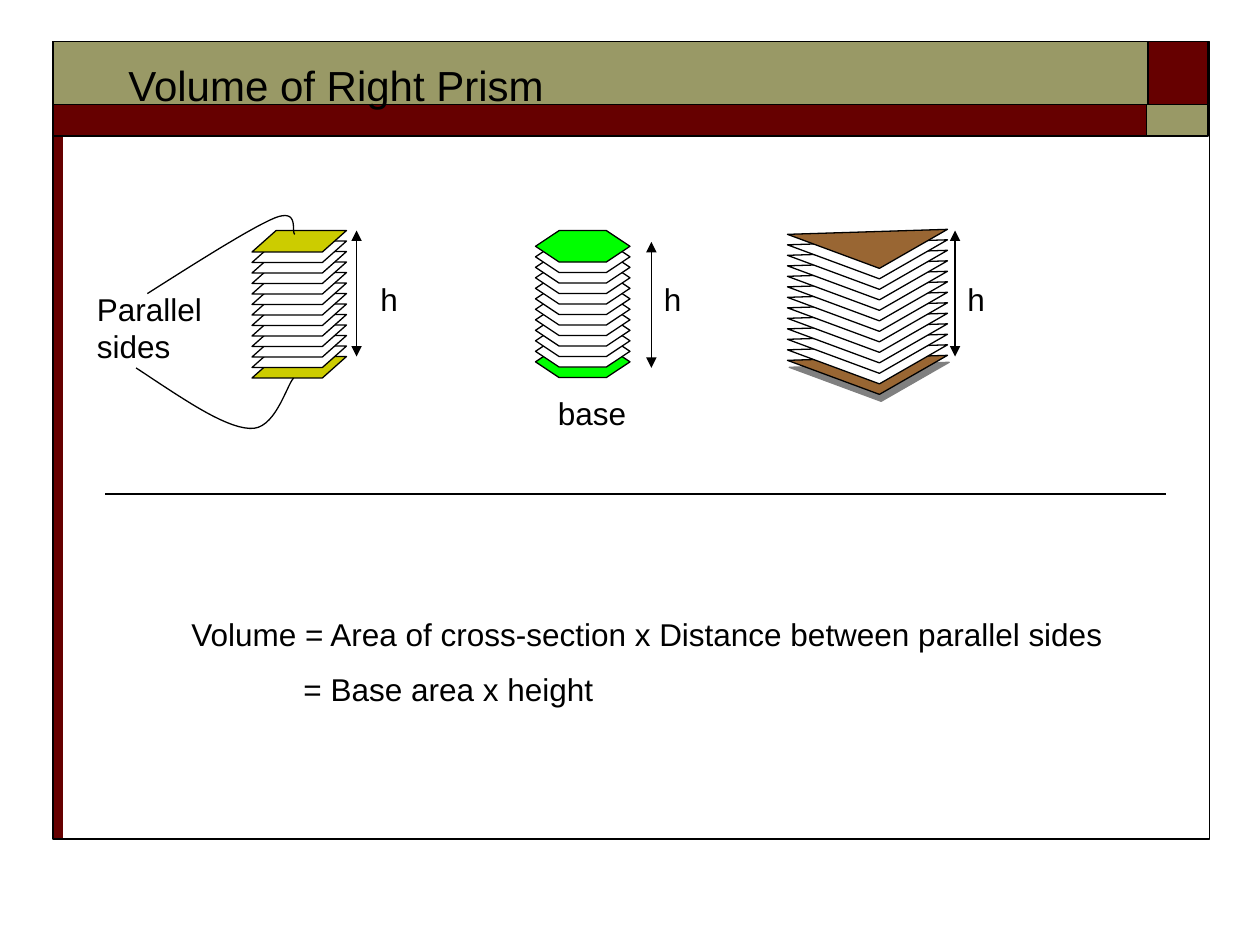
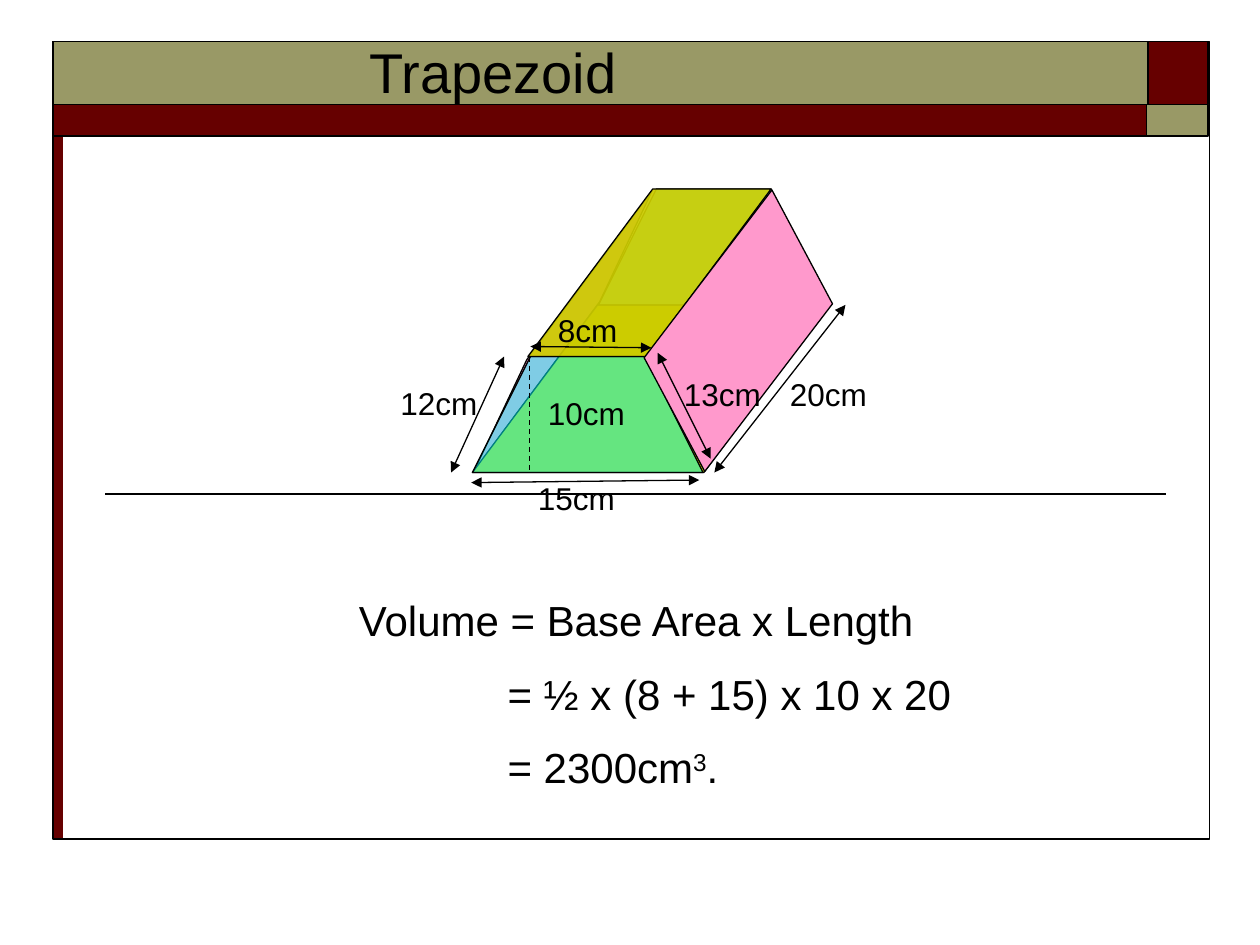
from lxml.etree import SubElement
from pptx import Presentation
from pptx.dml.color import RGBColor
from pptx.enum.dml import MSO_LINE
from pptx.enum.shapes import MSO_CONNECTOR, MSO_SHAPE
from pptx.enum.text import MSO_AUTO_SIZE, PP_ALIGN
from pptx.oxml.ns import qn
from pptx.util import Inches, Pt

COLORS = {
    "black": "000000", "white": "FFFFFF", "maroon": "660000", "olive": "999966",
    "yellow": "CCCC00", "green": "00FF00", "brown": "996633",
    "pink": "FF99CC", "cyan": "00FFFF", "gray": "808080",
}
FONT = "Arial"

# Frame shared by both slides: left, top, width, height, fill, line width
BANDS = [
    (0.42, 1.08, 0.08, 5.58, "maroon", 0),
    (9.09, 0.33, 0.5, 0.5, "maroon", 1),
    (0.42, 0.33, 8.69, 0.5, "olive", 1),
    (0.42, 0.83, 8.69, 0.25, "maroon", 1),
    (9.1, 0.83, 0.49, 0.25, "olive", 1),
    (0.42, 0.33, 9.18, 6.33, None, 1),
]
DIVIDER = ((9.25, 3.92), (0.83, 3.92))

# Right prisms drawn as stacks of sheets
SHEET_GAP = 1 / 12
SHEET_STACKS = [
    dict(preset=MSO_SHAPE.PARALLELOGRAM, adjust=1.125, size=(0.75, 0.17),
         left=2, top=1.83, sheets=13, color="yellow"),
    dict(preset=MSO_SHAPE.HEXAGON, adjust=0.75, size=(0.75, 0.25),
         left=4.25, top=1.83, sheets=12, color="green"),
]
TRIANGLE = [(6.98, 2.13), (7.52, 1.82), (6.25, 1.86)]
TRIANGLE_SHEETS = 13
HEIGHT_ARROWS = [((2.83, 1.83), (2.83, 2.83)), ((7.58, 1.83), (7.58, 2.83)),
                 ((5.17, 1.92), (5.17, 2.92))]
CALLOUT_CURVES = [
    [(1.17, 2.33), (1.58, 2.07), (1.99, 1.81), (2.18, 1.73),
     (2.38, 1.65), (2.31, 1.84), (2.34, 1.86)],
    [(1.08, 2.92), (1.43, 3.15), (1.77, 3.39), (1.98, 3.4),
     (2.18, 3.42), (2.27, 3.07), (2.33, 3)],
]
PRISM_LABELS = [
    ("h", 2.92, 2.17, 0.33, 0.4), ("h", 5.17, 2.17, 0.33, 0.4),
    ("h", 7.58, 2.17, 0.33, 0.4), ("Parallel sides", 0.67, 2.25, 1.08, 0.7),
    ("base", 4.33, 3.08, 0.75, 0.4),
]
PRISM_FORMULA = ["Volume = Area of cross-section x Distance between parallel sides",
                 "= Base area x height"]

# Trapezoid prism
TRAPEZOID = [(5.58, 3.75), (5.12, 2.83), (4.21, 2.83), (3.75, 3.75)]
BACK_SHIFT = (1, -1.33)
SIDE_FACES = {
    "left": dict(box=(3.16, 2.53, 2.62, 0.19), adjust=5.012, fill="pink", rotation=306.6),
    "bottom": dict(box=(3.75, 2.42, 2.83, 1.33), adjust=0.747, fill="yellow"),
    "top": dict(box=(4.19, 1.5, 1.93, 1.33), adjust=0.745, fill="yellow", alpha=93),
    "right": dict(box=(4.81, 2.16, 2.1, 0.93), adjust=0.459, fill="pink", rotation=307.3),
}
TRAPEZOID_HEIGHT = ((4.2, 2.83), (4.2, 3.75))
DIMENSIONS = [  # label, label left and top, arrow ends
    ("15cm", 4.17, 3.75, (3.74, 3.83), (5.55, 3.81)),
    ("8cm", 4.33, 2.42, (4.21, 2.75), (5.17, 2.76)),
    ("20cm", 6.17, 2.93, (5.67, 3.75), (6.71, 2.42)),
    ("13cm", 5.33, 2.93, (5.22, 2.8), (5.64, 3.64)),
    ("12cm", 3.08, 3, (3.58, 3.75), (4, 2.83)),
    ("10cm", 4.25, 3.08, None, None),
]
TRAPEZOID_FORMULA = ["Volume = Base Area x Length", "= ½ x (8 + 15) x 10 x 20",
                     "= 2300cm^3^."]


def rgb(name):
    return RGBColor.from_string(COLORS[name])


def paint(shape, fill=None, line=0.75, alpha=None):
    shape.shadow.inherit = False
    if fill:
        shape.fill.solid()
        shape.fill.fore_color.rgb = rgb(fill)
        if alpha:
            color = shape.fill._xPr.find(qn("a:solidFill"))[0]
            SubElement(color, qn("a:alpha"), val=str(alpha * 1000))
    else:
        shape.fill.background()
    if line:
        shape.line.color.rgb = rgb("black")
        shape.line.width = Pt(line)
    else:
        shape.line.fill.background()
    return shape


def add_preset(slide, preset, box, adjust=None, rotation=0, **style):
    shape = slide.shapes.add_shape(preset, *map(Inches, box))
    if adjust is not None:
        shape.adjustments[0] = adjust
    shape.rotation = rotation
    return paint(shape, **style)


def add_outline(slide, points, close=True, **style):
    start, *rest = [(Inches(x), Inches(y)) for x, y in points]
    builder = slide.shapes.build_freeform(*start)
    builder.add_line_segments(rest, close=close)
    return paint(builder.convert_to_shape(), **style)


def shifted(points, dx, dy):
    return [(x + dx, y + dy) for x, y in points]


def curve_points(knots, steps=16):
    """Sample a chain of cubic Bezier curves."""
    points = [knots[0]]
    for first in range(0, len(knots) - 1, 3):
        controls = knots[first:first + 4]
        for step in range(1, steps + 1):
            t = step / steps
            weights = ((1 - t) ** 3, 3 * t * (1 - t) ** 2, 3 * t * t * (1 - t), t ** 3)
            points.append(tuple(sum(w * c[axis] for w, c in zip(weights, controls))
                                for axis in (0, 1)))
    return points


def add_line(slide, start, end, width=0.75, arrows=False, dash=None):
    line = slide.shapes.add_connector(MSO_CONNECTOR.STRAIGHT,
                                      *map(Inches, (*start, *end)))
    line.line.color.rgb = rgb("black")
    line.line.width = Pt(width)
    if dash:
        line.line.dash_style = dash
    if arrows:
        for end_tag in ("a:headEnd", "a:tailEnd"):
            SubElement(line.line._get_or_add_ln(), qn(end_tag), type="triangle")
    SubElement(line._element.spPr, qn("a:effectLst"))


def add_text(slide, paragraphs, box, size=18, align=PP_ALIGN.LEFT, indent=0):
    """Write paragraphs; text between carets is superscript, later ones are indented."""
    frame = slide.shapes.add_textbox(*map(Inches, box)).text_frame
    frame.word_wrap = True
    frame.auto_size = MSO_AUTO_SIZE.SHAPE_TO_FIT_TEXT
    for index, content in enumerate(paragraphs):
        paragraph = frame.add_paragraph() if index else frame.paragraphs[0]
        paragraph.alignment = align
        if index:
            paragraph.space_before = Pt(round(size * 0.55, 1))
            paragraph._p.get_or_add_pPr().set("marL", str(Inches(indent)))
        for part, words in enumerate(content.split("^")):
            run = paragraph.add_run()
            run.text = words
            run.font.name = FONT
            run.font.size = Pt(size)
            run.font.color.rgb = rgb("black")
            if part % 2:
                run.font._element.set("baseline", "30000")


def add_framed_slide(deck):
    slide = deck.slides.add_slide(deck.slide_layouts[6])
    for *box, fill, line in BANDS:
        add_preset(slide, MSO_SHAPE.RECTANGLE, box, fill=fill, line=line)
    add_line(slide, *DIVIDER, width=1)
    return slide


def sheet_levels(count, color):
    """Give drop and fill of each sheet, from the bottom to the top."""
    for level in reversed(range(count)):
        yield level * SHEET_GAP, color if level in (0, count - 1) else "white"


def add_base_shadow(shape):
    effects = shape._element.spPr.find(qn("a:effectLst"))
    shadow = SubElement(effects, qn("a:outerShdw"), dist=str(Pt(4.1)),
                        dir=str(76 * 60000), algn="ctr", rotWithShape="0")
    SubElement(shadow, qn("a:srgbClr"), val=COLORS["gray"])


def build_right_prism(deck):
    slide = add_framed_slide(deck)
    for stack in SHEET_STACKS:
        for drop, fill in sheet_levels(stack["sheets"], stack["color"]):
            add_preset(slide, stack["preset"],
                       (stack["left"], stack["top"] + drop, *stack["size"]),
                       adjust=stack["adjust"], fill=fill)
    triangles = [add_outline(slide, shifted(TRIANGLE, 0, drop), fill=fill)
                 for drop, fill in sheet_levels(TRIANGLE_SHEETS, "brown")]
    add_base_shadow(triangles[0])

    add_text(slide, ["Volume of Right Prism"], (0.92, 0.42, 5.42, 0.5), size=24)
    add_text(slide, PRISM_FORMULA, (1.42, 4.83, 7.5, 0.85), indent=0.89)
    for ends in HEIGHT_ARROWS:
        add_line(slide, *ends, arrows=True)
    for label, *box in PRISM_LABELS:
        add_text(slide, [label], box)
    for knots in CALLOUT_CURVES:
        add_outline(slide, curve_points(knots), close=False)


def build_trapezoid(deck):
    slide = add_framed_slide(deck)

    def add_face(side):
        add_preset(slide, MSO_SHAPE.PARALLELOGRAM, **SIDE_FACES[side])

    add_face("left")
    add_face("bottom")
    for shift in (BACK_SHIFT, (0, 0)):
        add_outline(slide, shifted(TRAPEZOID, *shift), fill="cyan", alpha=50)
    add_face("top")
    add_face("right")
    add_line(slide, *TRAPEZOID_HEIGHT, dash=MSO_LINE.DASH)

    for label, left, top, start, end in DIMENSIONS:
        if start:
            add_line(slide, start, end, arrows=True)
        add_text(slide, [label], (left, top, 0.83, 0.4))
    add_text(slide, ["Trapezoid"], (2.08, 0.25, 3.67, 0.63), size=32,
             align=PP_ALIGN.CENTER)
    add_text(slide, TRAPEZOID_FORMULA, (2.75, 4.67, 5.58, 1.7), size=24, indent=1.18)


def main():
    deck = Presentation()
    deck.slide_width, deck.slide_height = Inches(10), Inches(7.5)
    build_right_prism(deck)
    build_trapezoid(deck)
    deck.save("out.pptx")


if __name__ == "__main__":
    main()
